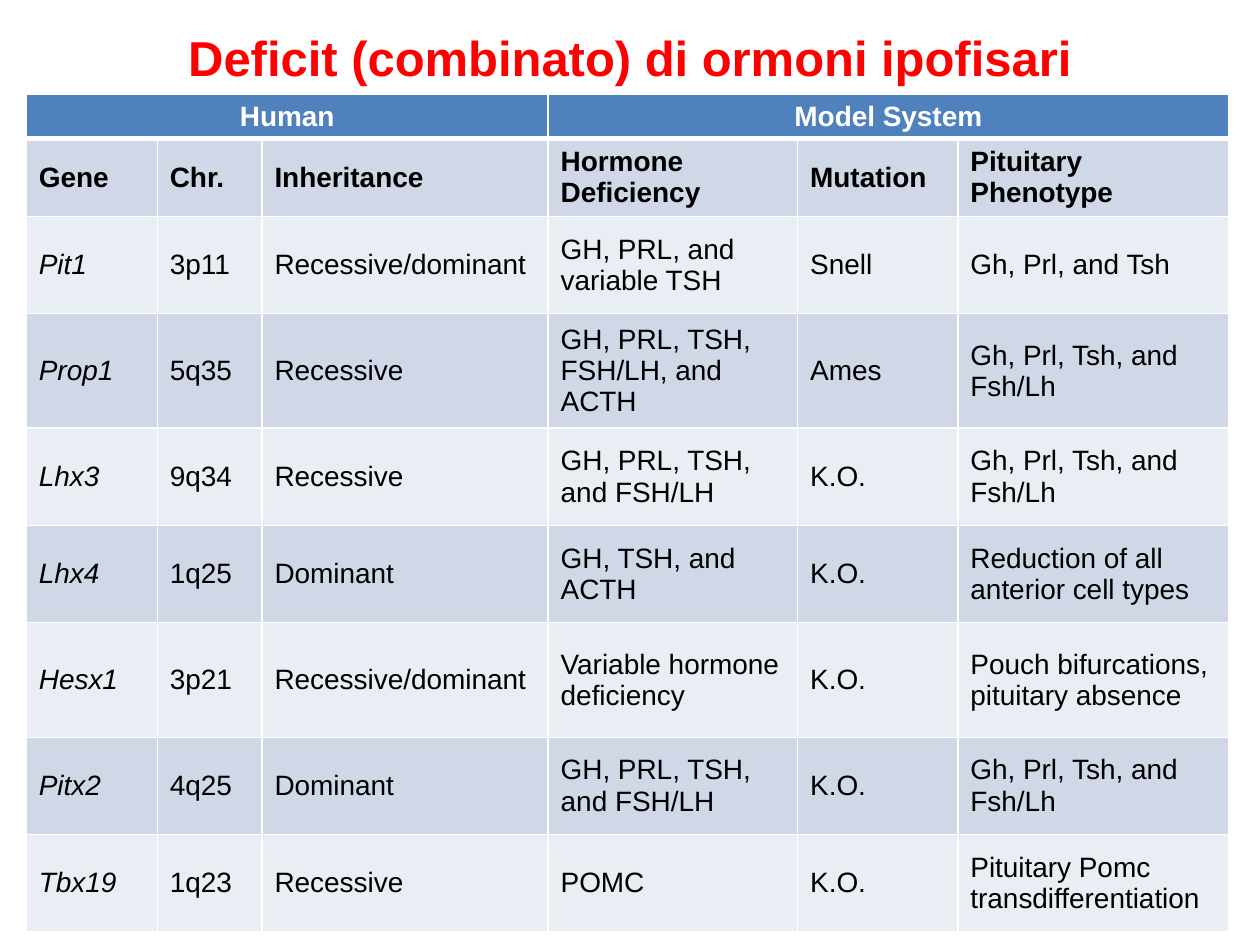
from pptx import Presentation, util as u
from pptx.dml.color import RGBColor as Rgb
from pptx.enum import text
from pptx.oxml import parse_xml
from pptx.oxml.ns import nsdecls

# Content
TITLE = "Deficit (combinato) di ormoni ipofisari"
GROUPS = [("Human", 0, 2), ("Model System", 3, 5)]
HEADS = ["Gene", "Chr.", "Inheritance", "Hormone Deficiency", "Mutation",
         "Pituitary Phenotype"]
GENES = [
    ["Pit1", "3p11", "Recessive/dominant", "GH, PRL, and variable TSH",
     "Snell", "Gh, Prl, and Tsh"],
    ["Prop1", "5q35", "Recessive", "GH, PRL, TSH, FSH/LH, and ACTH",
     "Ames", "Gh, Prl, Tsh, and Fsh/Lh"],
    ["Lhx3", "9q34", "Recessive", "GH, PRL, TSH, and FSH/LH",
     "K.O.", "Gh, Prl, Tsh, and Fsh/Lh"],
    ["Lhx4", "1q25", "Dominant", "GH, TSH, and ACTH",
     "K.O.", "Reduction of all anterior cell types"],
    ["Hesx1", "3p21", "Recessive/dominant", "Variable hormone deficiency",
     "K.O.", "Pouch bifurcations, pituitary absence"],
    ["Pitx2", "4q25", "Dominant", "GH, PRL, TSH, and FSH/LH",
     "K.O.", "Gh, Prl, Tsh, and Fsh/Lh"],
    ["Tbx19", "1q23", "Recessive", "POMC",
     "K.O.", "Pituitary Pomc transdifferentiation"],
]

# Sizes in cm
WIDTHS = [2.64, 2.11, 5.77, 5.03, 3.23, 5.46]
SHORT, TALL = 1.96, 2.31
HEIGHTS = [0.74, 1.57, SHORT, TALL, SHORT, SHORT, TALL, SHORT, SHORT]

THEME = {
    "font": "Arial", "title": 28, "body": 16,
    "red": "FF0000", "white": "FFFFFF", "black": "000000",
    "head": "4F81BD", "bands": ["D0D8E8", "E9EDF4"],
    "thin": 1, "thick": 3,
}


def style(para, size, color, bold=False, slant=False):
    for run in para.runs:
        font = run.font
        font.name, font.size = THEME["font"], u.Pt(size)
        font.bold, font.italic = bold, slant
        font.color.rgb = Rgb.from_string(THEME[color])


def edge(cell, low="thin", high="thin"):
    props = cell._tc.get_or_add_tcPr()
    for side, line in zip("LRTB", ("thin", "thin", high, low)):
        props.append(parse_xml(
            f'<a:ln{side} {nsdecls("a")} w="{u.Pt(THEME[line])}"><a:solidFill>'
            f'<a:srgbClr val="{THEME["white"]}"/></a:solidFill></a:ln{side}>'))


def paint(cell, fill):
    cell.fill.solid()
    cell.fill.fore_color.rgb = Rgb.from_string(fill)
    cell.vertical_anchor = text.MSO_ANCHOR.MIDDLE


def main():
    deck = Presentation()
    deck.slide_width, deck.slide_height = u.Cm(25.4), u.Cm(19.05)
    slide = deck.slides.add_slide(deck.slide_layouts[6])

    # Table grid
    rows = [HEADS] + GENES
    frame = slide.shapes.add_table(
        len(HEIGHTS), len(WIDTHS), u.Cm(0.53), u.Cm(1.91),
        u.Cm(sum(WIDTHS)), u.Cm(sum(HEIGHTS)))
    grid = frame.table
    for col, width in zip(grid.columns, WIDTHS):
        col.width = u.Cm(width)
    for row, height in zip(grid.rows, HEIGHTS):
        row.height = u.Cm(height)

    # Group header
    for col in range(len(WIDTHS)):
        cell = grid.cell(0, col)
        edge(cell, low="thick")
        paint(cell, THEME["head"])
    for name, first, last in GROUPS:
        cell = grid.cell(0, first)
        cell.merge(grid.cell(0, last))
        cell.text_frame.text = name
        para = cell.text_frame.paragraphs[0]
        para.alignment = text.PP_ALIGN.CENTER
        style(para, THEME["body"], "white", bold=True)

    # Column heads and genes, in alternating bands
    for r, row in enumerate(rows):
        for c, word in enumerate(row):
            cell = grid.cell(r + 1, c)
            edge(cell, high="thin" if r else "thick")
            paint(cell, THEME["bands"][r % 2])
            cell.text_frame.text = word
            style(cell.text_frame.paragraphs[0], THEME["body"], "black",
                  bold=r == 0, slant=r > 0 and c == 0)

    # Title
    box = slide.shapes.add_textbox(u.Cm(1.9), u.Cm(0.33), u.Cm(21.6), u.Cm(2.6))
    body = box.text_frame
    body.word_wrap = True
    body.margin_top = u.Cm(0.23)
    body.text = TITLE
    para = body.paragraphs[0]
    para.alignment = text.PP_ALIGN.CENTER
    style(para, THEME["title"], "red", bold=True)

    deck.save("out.pptx")


if __name__ == "__main__":
    main()
